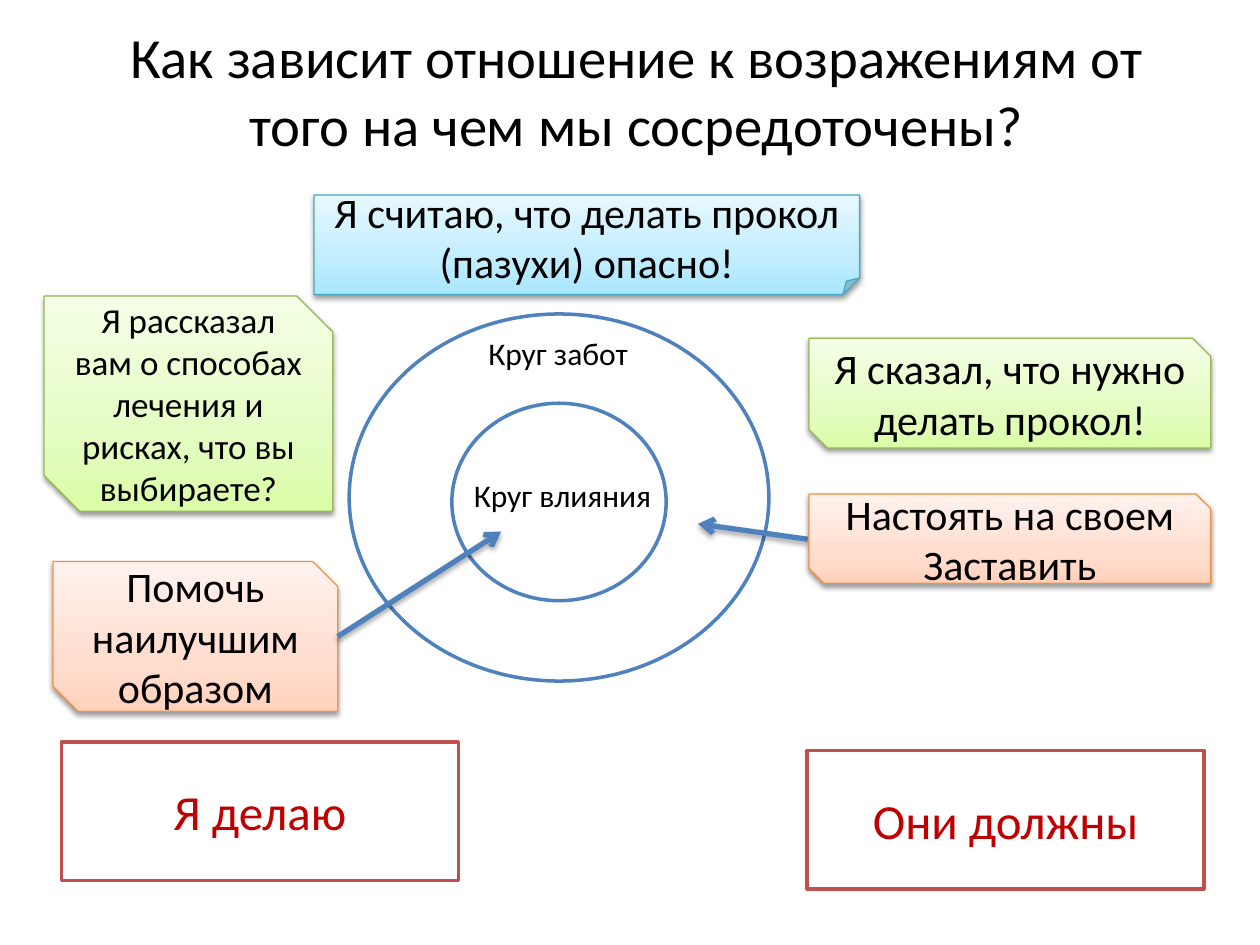
from dataclasses import dataclass

from lxml.etree import SubElement
from pptx import Presentation
from pptx.dml.color import RGBColor
from pptx.enum.shapes import MSO_CONNECTOR, MSO_SHAPE
from pptx.enum.text import MSO_ANCHOR, PP_ALIGN
from pptx.oxml import parse_xml
from pptx.oxml.ns import nsdecls, qn
from pptx.util import Cm, Pt

BLACK = RGBColor(0x00, 0x00, 0x00)
WHITE = RGBColor(0xFF, 0xFF, 0xFF)
BLUE = RGBColor(0x4F, 0x81, 0xBD)
BRICK = RGBColor(0xC0, 0x50, 0x4D)
RED = RGBColor(0xC0, 0x00, 0x00)


@dataclass
class Box:
    left: float
    top: float
    width: float
    height: float

    def inside(self, left, top, width, height):
        return Box(self.left + left, self.top + top, width, height)

    def lengths(self):
        return Cm(self.left), Cm(self.top), Cm(self.width), Cm(self.height)


@dataclass
class Palette:
    line: RGBColor
    bottom: RGBColor
    middle: RGBColor
    top: RGBColor


GREEN_NOTE = Palette(RGBColor(0x98, 0xB9, 0x55), RGBColor(0xDA, 0xFD, 0xA7),
                     RGBColor(0xE4, 0xFC, 0xC2), RGBColor(0xF5, 0xFF, 0xE7))
ORANGE_NOTE = Palette(RGBColor(0xF6, 0x92, 0x40), RGBColor(0xFF, 0xD2, 0xBD),
                      RGBColor(0xFF, 0xDE, 0xD0), RGBColor(0xFF, 0xF2, 0xED))
BLUE_NOTE = Palette(RGBColor(0x46, 0xAA, 0xC5), RGBColor(0xA7, 0xE6, 0xFF),
                    RGBColor(0xC1, 0xED, 0xFF), RGBColor(0xE7, 0xF8, 0xFF))


def write_text(shape, lines, size, color=BLACK):
    frame = shape.text_frame
    frame.word_wrap = True
    frame.vertical_anchor = MSO_ANCHOR.MIDDLE
    for index, line in enumerate(lines):
        paragraph = frame.add_paragraph() if index else frame.paragraphs[0]
        paragraph.alignment = PP_ALIGN.CENTER
        run = paragraph.add_run()
        run.text = line
        run.font.name = "Calibri"
        run.font.size = Pt(size)
        run.font.color.rgb = color


def add_label(slide, box, text, size):
    write_text(slide.shapes.add_textbox(*box.lengths()), [text], size)


def add_outline(slide, kind, box, color):
    shape = slide.shapes.add_shape(kind, *box.lengths())
    shape.shadow.inherit = False
    shape.fill.solid()
    shape.fill.fore_color.rgb = WHITE
    shape.line.color.rgb = color
    shape.line.width = Pt(2)
    return shape


def add_shadow(properties, distance, opacity):
    effects = properties.find(qn("a:effectLst"))
    if effects is None:
        effects = SubElement(properties, qn("a:effectLst"))
    effects.append(parse_xml(
        f'<a:outerShdw {nsdecls("a")} blurRad="{Pt(3.1)}" dist="{Pt(distance)}" '
        f'dir="5400000" rotWithShape="0"><a:srgbClr val="{BLACK}">'
        f'<a:alpha val="{opacity * 1000}"/></a:srgbClr></a:outerShdw>'))


def add_note(slide, box, lines, palette, size=24, kind=MSO_SHAPE.SNIP_2_DIAG_RECTANGLE):
    shape = slide.shapes.add_shape(kind, *box.lengths())
    shape.shadow.inherit = False
    shape.fill.gradient()
    shape.fill.gradient_angle = 90
    stops = shape._element.spPr.find(qn("a:gradFill")).find(qn("a:gsLst"))
    for stop in list(stops):
        stops.remove(stop)
    for position, color in ((0, palette.bottom), (35, palette.middle), (100, palette.top)):
        stop = SubElement(stops, qn("a:gs"), pos=str(position * 1000))
        SubElement(stop, qn("a:srgbClr"), val=str(color))
    shape.line.color.rgb = palette.line
    shape.line.width = Pt(0.75)
    add_shadow(shape._element.spPr, 1.6, 38)
    write_text(shape, lines, size)


def add_arrow(slide, start, end):
    connector = slide.shapes.add_connector(
        MSO_CONNECTOR.STRAIGHT, *(Cm(length) for length in (*start, *end)))
    connector.line.color.rgb = BLUE
    connector.line.width = Pt(3)
    SubElement(connector.line._get_or_add_ln(), qn("a:tailEnd"), type="arrow")
    add_shadow(connector._element.spPr, 1.8, 35)


def add_verdict(slide, box, text):
    shape = add_outline(slide, MSO_SHAPE.RECTANGLE, box, BRICK)
    write_text(shape, [text], 28, RED)


def add_circles(slide, box):
    add_outline(slide, MSO_SHAPE.OVAL, box, BLUE)
    add_outline(slide, MSO_SHAPE.OVAL, box.inside(2.07, 1.8, 4.32, 3.98), BLUE)
    add_label(slide, box.inside(2.05, 0.2, 4.32, 1.19), "Круг забот", 18)
    add_label(slide, box.inside(2.14, 3.06, 4.32, 1.19), "Круг влияния", 18)


def add_concern_side(slide, box):
    add_note(slide, box.inside(0.03, 0, 8.1, 2.21),
             ["Я сказал, что нужно делать прокол!"], GREEN_NOTE)
    add_arrow(slide, (box.left, box.top + 4.05), (box.left - 2.21, box.top + 3.74))
    add_note(slide, box.inside(0.03, 3.14, 8.1, 1.8),
             ["Настоять на своем", "Заставить"], ORANGE_NOTE)
    add_verdict(slide, box.inside(-0.01, 8.31, 8, 2.79), "Они должны")


def add_influence_side(slide, box):
    add_note(slide, box.inside(0, 0, 5.82, 4.34),
             ["Я рассказал вам о способах лечения и рисках, что вы выбираете?"],
             GREEN_NOTE, 20)
    add_note(slide, box.inside(0.18, 5.35, 5.74, 3.02),
             ["Помочь наилучшим образом"], ORANGE_NOTE)
    add_arrow(slide, (box.left + 5.92, box.top + 6.86), (box.left + 9.21, box.top + 4.75))
    add_verdict(slide, box.inside(0.35, 8.99, 8, 2.79), "Я делаю")


def main():
    presentation = Presentation()
    presentation.slide_width = Cm(25.4)
    presentation.slide_height = Cm(19.05)
    slide = presentation.slides.add_slide(presentation.slide_layouts[6])
    add_label(slide, Box(1.4, 0.53, 22.86, 2.57),
              "Как зависит отношение к возражениям от того на чем мы сосредоточены?", 32.4)
    add_circles(slide, Box(7.04, 6.33, 8.46, 7.4))
    add_concern_side(slide, Box(16.28, 6.82, 8.13, 11.1))
    add_note(slide, Box(6.33, 3.93, 11, 2.01),
             ["Я считаю, что делать прокол (пазухи) опасно!"],
             BLUE_NOTE, kind=MSO_SHAPE.FOLDED_CORNER)
    add_influence_side(slide, Box(0.89, 5.97, 8.35, 11.78))
    presentation.save("out.pptx")


if __name__ == "__main__":
    main()
